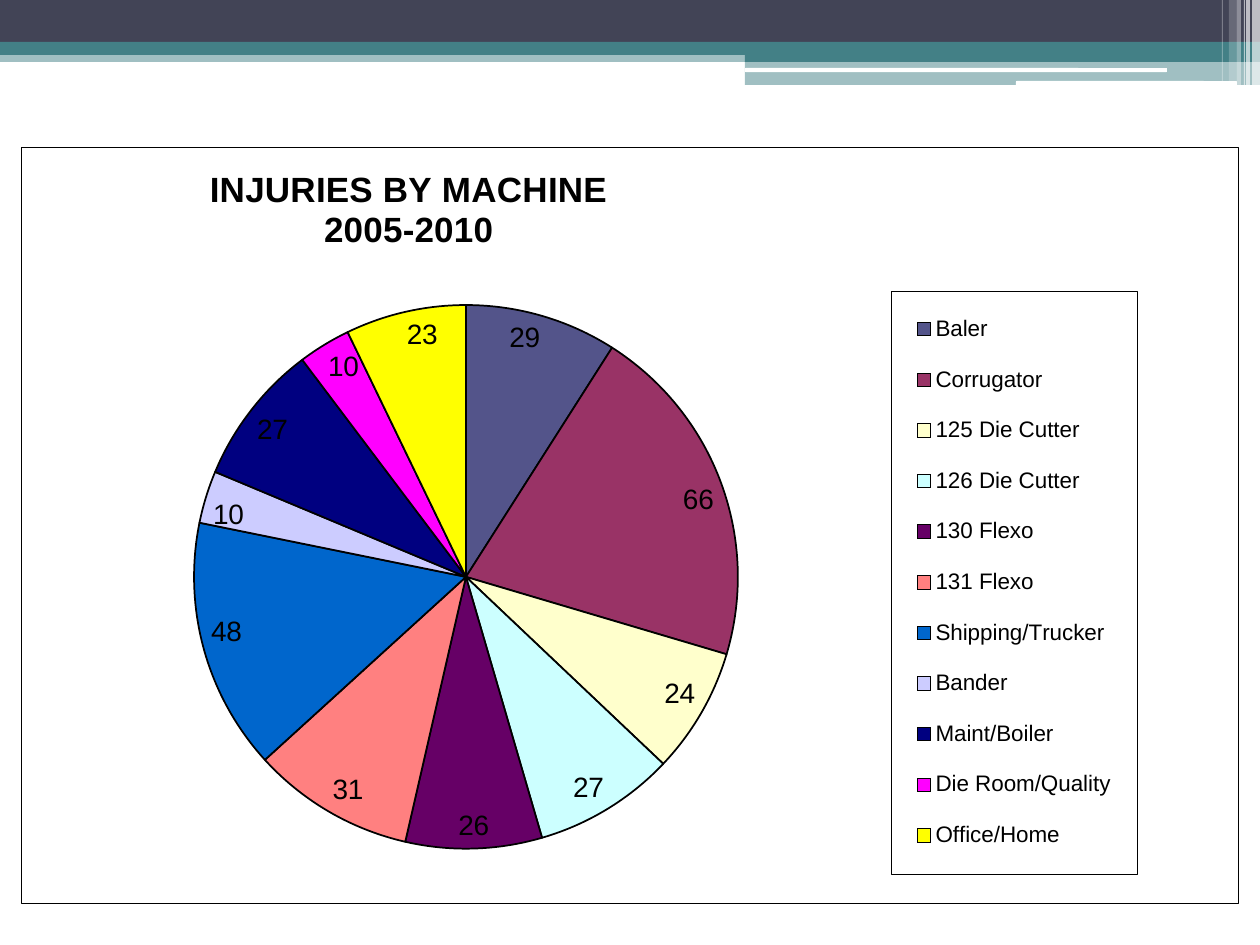
from lxml.etree import SubElement
from pptx import Presentation
from pptx.chart.data import CategoryChartData
from pptx.dml.color import RGBColor
from pptx.enum.chart import XL_CHART_TYPE as ChartType, XL_LABEL_POSITION as LabelPos, XL_LEGEND_POSITION as LegendPos
from pptx.enum.shapes import MSO_SHAPE as Shape
from pptx.oxml import parse_xml
from pptx.oxml.ns import nsdecls, qn
from pptx.util import Pt

SCALE = 914400 / 126
WIDTH, HEIGHT = 1260, 945
TEAL, NAVY, WHITE, BLACK = "438086", "424456", "FFFFFF", "000000"

BANNER = [
    (Shape.RECTANGLE, (0, 50, 1260, 12), TEAL, 50),
    (Shape.RECTANGLE, (0, 0, 1260, 42), NAVY, 100),
    (Shape.RECTANGLE, (0, 42, 1260, 13), TEAL, 100),
    (Shape.RECTANGLE, (745, 49, 515, 13), TEAL, 100),
    (Shape.RECTANGLE, (745, 61, 515, 24), TEAL, 50),
    (Shape.ROUNDED_RECTANGLE, (745, 68, 422, 4), WHITE, 100),
    (Shape.ROUNDED_RECTANGLE, (1016, 81, 221, 5), WHITE, 100),
    (Shape.RECTANGLE, (1252, 0, 8, 85), WHITE, 65),
    (Shape.RECTANGLE, (1246, 0, 4, 85), WHITE, 65),
    (Shape.RECTANGLE, (1244, 0, 1, 85), WHITE, 60),
    (Shape.RECTANGLE, (1237, 0, 4, 85), WHITE, 40),
    (Shape.RECTANGLE, (1229, 0, 8, 81), WHITE, 20),
    (Shape.RECTANGLE, (1222, 0, 1, 81), WHITE, 30),
]
TITLE = ["INJURIES BY MACHINE", "2005-2010"]
INJURIES = [
    ("Baler", 29, "53548A"),
    ("Corrugator", 66, "993366"),
    ("125 Die Cutter", 24, "FFFFCC"),
    ("126 Die Cutter", 27, "CCFFFF"),
    ("130 Flexo", 26, "660066"),
    ("131 Flexo", 31, "FF8080"),
    ("Shipping/Trucker", 48, "0066CC"),
    ("Bander", 10, "CCCCFF"),
    ("Maint/Boiler", 27, "000080"),
    ("Die Room/Quality", 10, "FF00FF"),
    ("Office/Home", 23, "FFFF00"),
]
CHART_BOX = (21, 147, 1218, 756)
PLOT_BOX = (168, 305, 596, 544)
LEGEND_BOX = (891, 291, 246, 583)
TITLE_BOX = (206, 165)


def px(value):
    return round(value * SCALE)


def color(hex_code):
    return RGBColor.from_string(hex_code)


def style_font(font, **values):
    for name, value in {"name": "Arial", "bold": False, **values}.items():
        setattr(font, name, value)
    font.color.rgb = color(BLACK)


def add_bar(page, kind, box, fill, alpha):
    bar = page.shapes.add_shape(kind, *map(px, box))
    bar.shadow.inherit = False
    bar.fill.solid()
    bar.fill.fore_color.rgb = color(fill)
    bar.line.fill.background()
    if alpha < 100:
        tint = bar.fill._xPr.find(".//" + qn("a:srgbClr"))
        SubElement(tint, qn("a:alpha"), val=str(alpha * 1000))


def place(element, box, index, inner=False):
    for old in element.findall(qn("c:layout")):
        element.remove(old)
    left, top, width, height = CHART_BOX
    shares = [(box[0] - left) / width, (box[1] - top) / height]
    shares += [size / total for size, total in zip(box[2:], (width, height))]
    layout = parse_xml(f"<c:layout {nsdecls('c')}><c:manualLayout/></c:layout>")
    values = [("layoutTarget", "inner")] if inner else []
    values += [("xMode", "edge"), ("yMode", "edge")]
    values += [(name, f"{share:.4f}") for name, share in zip("xywh", shares)]
    for name, value in values:
        SubElement(layout[0], qn("c:" + name), val=value)
    element.insert(index, layout)


def frame(fill=WHITE):
    return parse_xml(
        f'<c:spPr {nsdecls("c", "a")}><a:solidFill><a:srgbClr val="{fill}"/></a:solidFill>'
        f'<a:ln w="3175"><a:solidFill><a:srgbClr val="{BLACK}"/></a:solidFill></a:ln></c:spPr>')


def add_title(chart):
    chart.has_title = True
    text = chart.chart_title.text_frame
    text.text = "\n".join(TITLE)
    for para in text.paragraphs:
        for span in para.runs:
            style_font(span.font, size=Pt(20), bold=True)
    place(chart.chart_title._element, TITLE_BOX, 1)


def add_legend(chart):
    chart.has_legend = True
    legend = chart.legend
    legend.position = LegendPos.RIGHT
    legend.include_in_layout = False
    style_font(legend.font, size=Pt(12.8))
    place(legend._element, LEGEND_BOX, 1)
    legend._element.find(qn("c:overlay")).addnext(frame())


def color_slices(plot):
    for index, (_, _, fill) in enumerate(INJURIES):
        form = plot.series[0].points[index].format
        form.fill.solid()
        form.fill.fore_color.rgb = color(fill)
        form.line.color.rgb = color(BLACK)
        form.line.width = Pt(1)


def add_labels(plot):
    plot.has_data_labels = True
    labels = plot.data_labels
    for name, value in {"show_value": True, "show_percentage": False,
                        "position": LabelPos.INSIDE_END}.items():
        setattr(labels, name, value)
    style_font(labels.font, size=Pt(16))


def add_pie(page):
    data = CategoryChartData()
    data.categories = [name for name, _, _ in INJURIES]
    data.add_series("Series 1", [count for _, count, _ in INJURIES])
    chart = page.shapes.add_chart(ChartType.PIE, *map(px, CHART_BOX), data).chart
    style_font(chart.font, size=Pt(10))
    add_title(chart)
    add_legend(chart)
    plot = chart.plots[0]
    plot.vary_by_categories = True
    color_slices(plot)
    add_labels(plot)
    body = chart._chartSpace.find(qn("c:chart"))
    body.addnext(frame())
    place(body.find(qn("c:plotArea")), PLOT_BOX, 0, inner=True)


def main():
    deck = Presentation()
    deck.slide_width, deck.slide_height = px(WIDTH), px(HEIGHT)
    page = deck.slides.add_slide(deck.slide_layouts[6])
    for bar in BANNER:
        add_bar(page, *bar)
    add_pie(page)
    deck.save("out.pptx")


if __name__ == "__main__":
    main()
